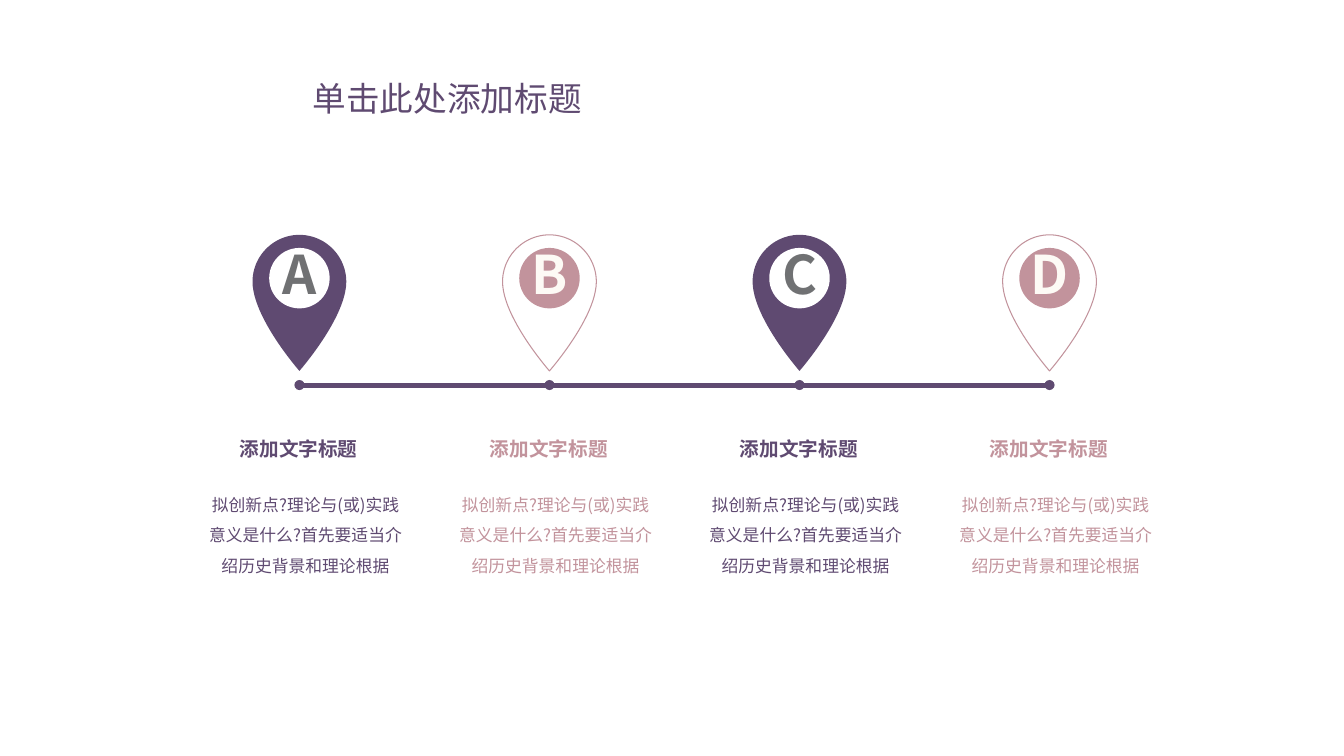
"""Build a four-step timeline slide with map pins lettered A to D."""
from dataclasses import dataclass

from lxml.etree import SubElement
from pptx import Presentation
from pptx.dml.color import RGBColor
from pptx.enum.shapes import MSO_CONNECTOR, MSO_SHAPE
from pptx.enum.text import MSO_ANCHOR, MSO_AUTO_SIZE, PP_ALIGN
from pptx.oxml.ns import qn
from pptx.util import Inches, Pt

TITLE = "单击此处添加标题"
HEADING = "添加文字标题"
BODY = "拟创新点?理论与(或)实践意义是什么?首先要适当介绍历史背景和理论根据"
STEPS = [(letter, HEADING, BODY) for letter in "ABCD"]


@dataclass(frozen=True)
class Theme:
    purple: str = "5F4A71"
    rose: str = "C2939C"
    white: str = "FFFFFF"
    grey: str = "707173"
    cream: str = "FDFAF5"
    font: str = "Noto Sans CJK SC"
    title: int = 24
    letter: int = 38
    heading: int = 14
    body: int = 12
    outline: float = 0.75
    track: float = 3.6


THEME = Theme()

FIRST_X, PITCH = 2.97, 2.48
PIN_TOP, PIN_RADIUS, PIN_HEIGHT = 2.33, 0.465, 1.35
TRACK_Y, HEADING_TOP, BODY_TOP = 3.82, 4.29, 4.76
TEXT_SHIFT = 0.06
DISC, DISC_DROP, DOT = 0.6, 0.43, 0.1
LETTER_LIFT = 0.09
CURVE_STEPS = 24


def rgb(value):
    return RGBColor.from_string(value)


def paint(sp, fill=None, line=None):
    sp.shadow.inherit = False
    if fill:
        sp.fill.solid()
        sp.fill.fore_color.rgb = rgb(fill)
    else:
        sp.fill.background()
    if line:
        sp.line.color.rgb = rgb(line)
        sp.line.width = Pt(THEME.outline)
    else:
        sp.line.fill.background()


def curve(*ends):
    points = []
    for step in range(CURVE_STEPS + 1):
        t = step / CURVE_STEPS
        weights = ((1 - t) ** 3, 3 * t * (1 - t) ** 2, 3 * t * t * (1 - t), t ** 3)
        points.append(tuple(sum(w * e[axis] for w, e in zip(weights, ends))
                            for axis in (0, 1)))
    return points


def add_pin_outline(shapes, x, **colours):
    side, tip = PIN_RADIUS, PIN_HEIGHT
    bend = side * 0.55
    right = curve((0, 0), (bend, 0), (side, side - bend), (side, side))
    right += curve((side, side), (side, 0.82), (0, tip), (0, tip))
    left = [(-px, py) for px, py in reversed(right)]
    points = [(Inches(x + px), Inches(PIN_TOP + py)) for px, py in right + left]
    builder = shapes.build_freeform(*points[0])
    builder.add_line_segments(points[1:], close=True)
    paint(builder.convert_to_shape(), **colours)


def add_circle(shapes, x, y, size, fill):
    sp = shapes.add_shape(MSO_SHAPE.OVAL, Inches(x - size / 2), Inches(y - size / 2),
                          Inches(size), Inches(size))
    paint(sp, fill)
    return sp


def write(sp, text, size, color, bold=False, align=PP_ALIGN.CENTER, wrap=False, spacing=1.0,
          fit=MSO_AUTO_SIZE.SHAPE_TO_FIT_TEXT):
    tf = sp.text_frame
    tf.word_wrap = wrap
    tf.auto_size = fit
    p = tf.paragraphs[0]
    p.alignment = align
    p.line_spacing = spacing
    r = p.add_run()
    r.text = text
    r.font.size = Pt(size)
    r.font.bold = bold
    r.font.color.rgb = rgb(color)
    r.font.name = THEME.font
    SubElement(r.font._element, qn("a:ea"), typeface=THEME.font)


def add_text(shapes, text, x, y, width, height, **style):
    sp = shapes.add_textbox(Inches(x - width / 2), Inches(y), Inches(width), Inches(height))
    write(sp, text, **style)


def add_track(shapes, centres):
    line = shapes.add_connector(MSO_CONNECTOR.STRAIGHT, Inches(centres[0]), Inches(TRACK_Y),
                                Inches(centres[-1]), Inches(TRACK_Y))
    line.line.color.rgb = rgb(THEME.purple)
    line.line.width = Pt(THEME.track)
    SubElement(line._element.spPr, qn("a:effectLst"))
    for x in centres:
        add_circle(shapes, x, TRACK_Y, DOT, THEME.purple)


def add_pin(shapes, letter, x, solid):
    if solid:
        pin, disc, ink = {"fill": THEME.purple}, THEME.white, THEME.grey
    else:
        pin, disc, ink = {"line": THEME.rose}, THEME.rose, THEME.cream
    add_pin_outline(shapes, x, **pin)
    sp = add_circle(shapes, x, PIN_TOP + DISC_DROP, DISC, disc)
    tf = sp.text_frame
    tf.margin_left = tf.margin_right = tf.margin_top = 0
    tf.margin_bottom = Inches(LETTER_LIFT)
    tf.vertical_anchor = MSO_ANCHOR.MIDDLE
    write(sp, letter, size=THEME.letter, color=ink, bold=True, fit=MSO_AUTO_SIZE.NONE)


def main():
    prs = Presentation()
    prs.slide_width, prs.slide_height = Inches(13.33), Inches(7.5)
    slide = prs.slides.add_slide(prs.slide_layouts[5])
    shapes = slide.shapes

    title = shapes.title
    title.left, title.top = Inches(2.99), Inches(0.72)
    title.width, title.height = Inches(2.89), Inches(0.5)
    write(title, TITLE, size=THEME.title, color=THEME.purple)

    centres = [FIRST_X + PITCH * i for i in range(len(STEPS))]
    add_track(shapes, centres)
    for i, (x, (letter, heading, body)) in enumerate(zip(centres, STEPS)):
        solid = i % 2 == 0
        color = THEME.purple if solid else THEME.rose
        add_pin(shapes.add_group_shape().shapes, letter, x, solid)
        texts = shapes.add_group_shape().shapes
        add_text(texts, body, x + TEXT_SHIFT, BODY_TOP, 2.12, 1.01, size=THEME.body,
                 color=color, wrap=True, spacing=1.5)
        add_text(texts, heading, x, HEADING_TOP, 1.38, 0.34, size=THEME.heading,
                 color=color, bold=True, align=PP_ALIGN.LEFT)
    prs.save("out.pptx")


if __name__ == "__main__":
    main()
